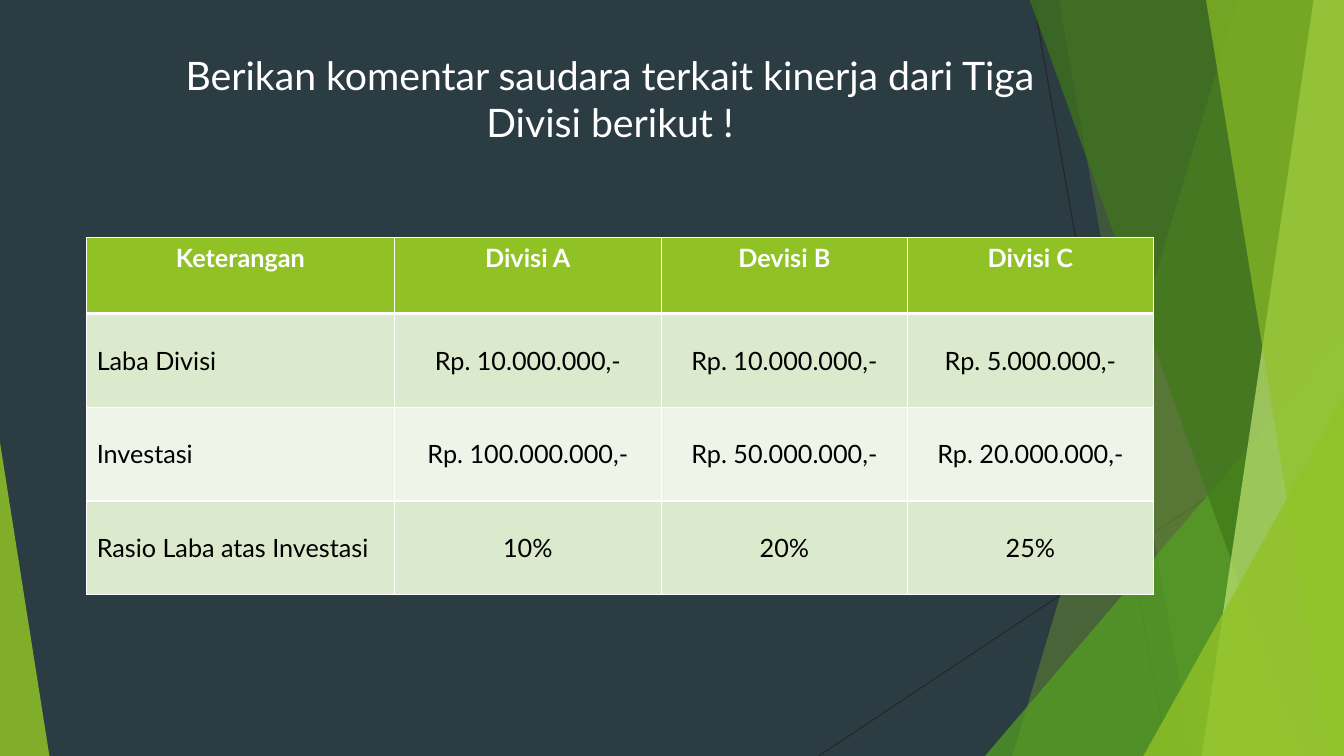
from lxml.etree import SubElement
from pptx import Presentation
from pptx.dml.color import RGBColor
from pptx.enum.shapes import MSO_CONNECTOR, MSO_SHAPE
from pptx.enum.text import MSO_ANCHOR, PP_ALIGN
from pptx.oxml.ns import qn
from pptx.util import Inches, Pt

WIDTH, HEIGHT = 13.33, 7.5
FONT = "Lato"
SLATE = RGBColor(0x2C, 0x3C, 0x43)
CHARCOAL = RGBColor(0x26, 0x26, 0x26)
LIME = RGBColor(0x90, 0xC2, 0x26)
GREEN = RGBColor(0x54, 0xA0, 0x21)
FOREST = RGBColor(0x3F, 0x78, 0x19)
PALE_LIME = RGBColor(0xC0, 0xE4, 0x74)
BAND_DARK = RGBColor(0xDB, 0xE9, 0xCD)
BAND_LIGHT = RGBColor(0xEE, 0xF4, 0xE8)
WHITE = RGBColor(0xFF, 0xFF, 0xFF)
BLACK = RGBColor(0, 0, 0)

TITLE = "Berikan komentar saudara terkait kinerja dari Tiga Divisi berikut !"
COLUMN_WIDTHS = [3.05, 2.65, 2.44, 2.44]
ROW_HEIGHTS = [0.75, 0.93, 0.93, 0.93]
DIVISIONS = [
    ["Keterangan", "Divisi A", "Devisi B", "Divisi C"],
    ["Laba Divisi", "Rp. 10.000.000,-", "Rp. 10.000.000,-", "Rp. 5.000.000,-"],
    ["Investasi", "Rp. 100.000.000,-", "Rp. 50.000.000,-", "Rp. 20.000.000,-"],
    ["Rasio Laba atas Investasi", "10%", "20%", "25%"],
]


def paint(shape, color, opacity):
    """Fill a borderless shape; opacity is in percent."""
    shape.shadow.inherit = False
    shape.line.fill.background()
    shape.fill.solid()
    shape.fill.fore_color.rgb = color
    solid = shape.fill._xPr.find(qn("a:solidFill"))
    SubElement(solid[0], qn("a:alpha"), val=str(opacity * 1000))


def add_hairline(page, start, end):
    line = page.shapes.add_connector(
        MSO_CONNECTOR.STRAIGHT, *(Inches(value) for value in start + end))
    line.line.color.rgb = CHARCOAL
    line.line.width = Pt(0.75)
    SubElement(line._element.spPr, qn("a:effectLst"))


def add_panel(page, top_x, bottom_x, color, opacity):
    """Full-height panel with a slanted left side, ending at the right edge."""
    top = Inches(-0.01)
    right, bottom = Inches(WIDTH), Inches(HEIGHT)
    builder = page.shapes.build_freeform(Inches(top_x), top, scale=1.0)
    builder.add_line_segments(
        [(right, top), (right, bottom), (Inches(bottom_x), bottom)], close=True)
    paint(builder.convert_to_shape(), color, opacity)


def add_corner(page, left, top, width, apex, color, opacity):
    """Right triangle standing on the bottom edge of the page."""
    corner = page.shapes.add_shape(
        MSO_SHAPE.ISOSCELES_TRIANGLE, Inches(left), Inches(top),
        Inches(width), Inches(HEIGHT - top))
    corner.adjustments[0] = apex
    paint(corner, color, opacity)


def add_backdrop(page):
    page.background.fill.solid()
    page.background.fill.fore_color.rgb = SLATE
    add_hairline(page, (10.25, 0), (11.58, HEIGHT))
    add_hairline(page, (WIDTH, 4.03), (8.12, HEIGHT))
    add_panel(page, 12.28, 10.04, LIME, 30)
    add_panel(page, 10.5, 11.83, LIME, 20)
    add_corner(page, 9.77, 3.33, 3.56, 1, GREEN, 72)
    add_panel(page, 10.21, 12.91, FOREST, 70)
    add_panel(page, 13.03, 11.92, PALE_LIME, 70)
    add_panel(page, 11.96, 13.18, LIME, 65)
    add_corner(page, 11.34, 3.93, 1.99, 1, LIME, 80)
    add_corner(page, 0, 4.39, 0.49, 0, LIME, 85)


def write(para, text, size, color, align, bold=False):
    para.alignment = align
    span = para.add_run()
    span.text = text
    span.font.name = FONT
    span.font.size = Pt(size)
    span.font.bold = bold
    span.font.color.rgb = color


def add_title(page, left, top, width, height):
    box = page.shapes.add_textbox(
        Inches(left), Inches(top), Inches(width), Inches(height))
    box.text_frame.word_wrap = True
    write(box.text_frame.paragraphs[0], TITLE, 28, WHITE, PP_ALIGN.CENTER)


def add_borders(cell, bottom_width):
    """White cell borders, placed ahead of the fill as the schema asks."""
    properties = cell._tc.get_or_add_tcPr()
    sides = [("a:lnL", 1), ("a:lnR", 1), ("a:lnT", 1), ("a:lnB", bottom_width)]
    for index, (side, points) in enumerate(sides):
        border = SubElement(properties, qn(side), w=str(Pt(points)))
        solid = SubElement(border, qn("a:solidFill"))
        SubElement(solid, qn("a:srgbClr"), val=str(WHITE))
        properties.insert(index, border)


def add_division_table(page, left, top):
    table = page.shapes.add_table(
        len(ROW_HEIGHTS), len(COLUMN_WIDTHS), Inches(left), Inches(top),
        Inches(sum(COLUMN_WIDTHS)), Inches(sum(ROW_HEIGHTS))).table
    for column, width in zip(table.columns, COLUMN_WIDTHS):
        column.width = Inches(width)
    for row, height in zip(table.rows, ROW_HEIGHTS):
        row.height = Inches(height)
    for r, texts in enumerate(DIVISIONS):
        header = r == 0
        band = LIME if header else BAND_DARK if r % 2 else BAND_LIGHT
        for c, text in enumerate(texts):
            cell = table.cell(r, c)
            cell.fill.solid()
            cell.fill.fore_color.rgb = band
            cell.vertical_anchor = MSO_ANCHOR.TOP if header else MSO_ANCHOR.MIDDLE
            add_borders(cell, 3 if header else 1)
            align = PP_ALIGN.CENTER if header or c else PP_ALIGN.LEFT
            write(cell.text_frame.paragraphs[0], text, 18,
                  WHITE if header else BLACK, align, bold=header)


def main():
    deck = Presentation()
    deck.slide_width, deck.slide_height = Inches(WIDTH), Inches(HEIGHT)
    page = deck.slides.add_slide(deck.slide_layouts[6])
    add_backdrop(page)
    add_title(page, 1.55, 0.46, 9, 1.41)
    add_division_table(page, 0.86, 2.36)
    deck.save("out.pptx")


if __name__ == "__main__":
    main()
